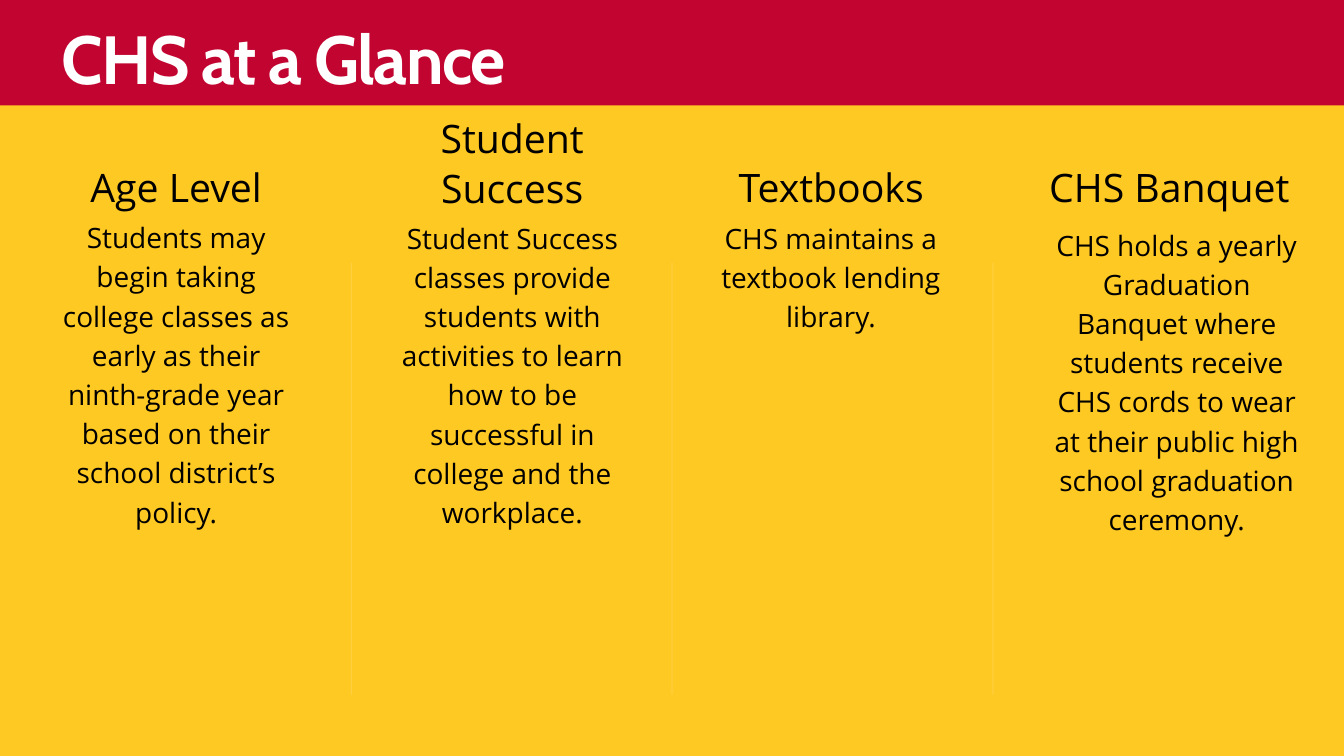
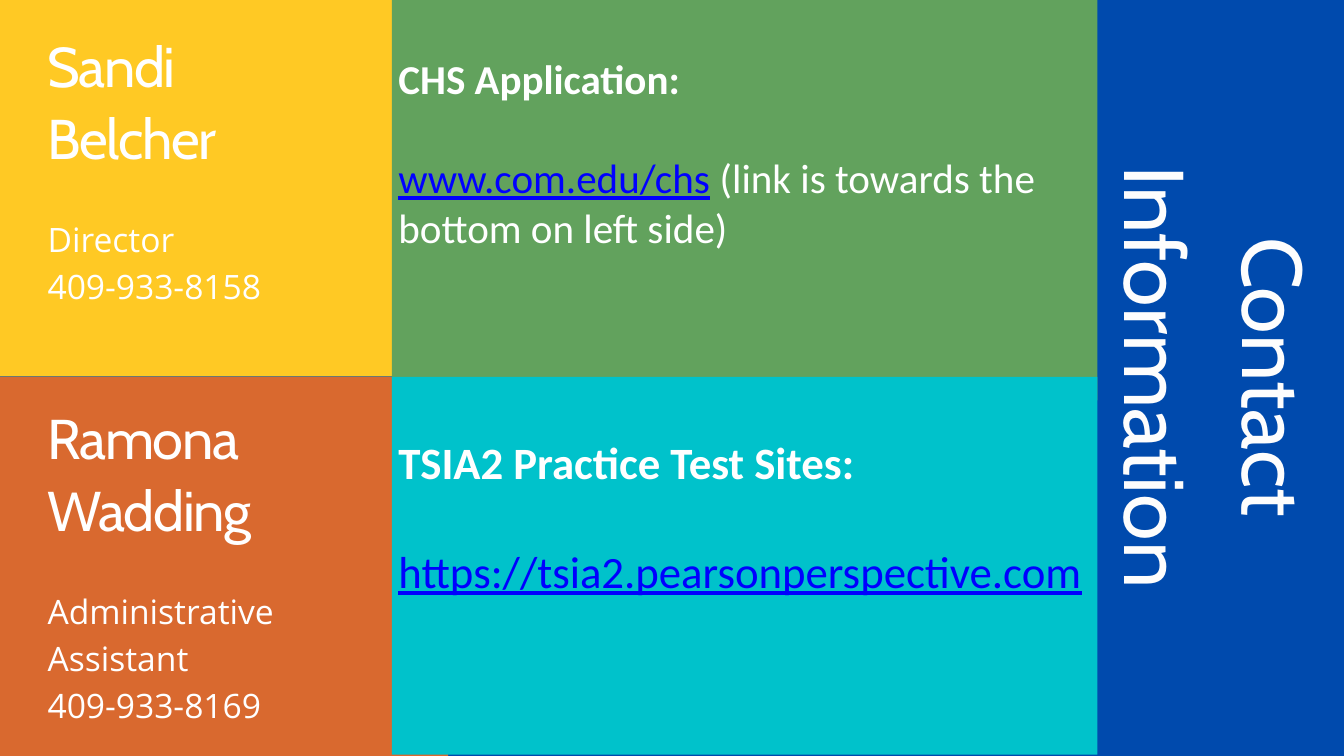
import pptx
import pptx.dml.color
import pptx.enum.shapes
import pptx.enum.text
import pptx.util
from lxml import etree
from pptx.oxml.ns import qn
from pptx.util import Cm, Pt

YELLOW, RED, BLUE = "FFC924", "C20530", "004AAD"
GREEN, TURQUOISE, ORANGE = "62A25D", "00C2CB", "D9692F"
WHITE, BLACK, LINK_BLUE, OFF_WHITE = "FFFFFF", "000000", "0000FF", "FDFDFD"
DISPLAY_FONT, BODY_FONT, PANEL_FONT = "Cabin", "Open Sans", "Calibri"
CENTER = pptx.enum.text.PP_ALIGN.CENTER
LEFT = pptx.enum.text.PP_ALIGN.LEFT
SLIDE_WIDTH, SLIDE_HEIGHT = 50.8, 28.58

# heading lines, heading left and width, body left, top, width and height, body
COLUMNS = [
    (["Age Level"], (1.35, 10.62), (1.96, 8.13, 9.4, 11.86),
     "Students may begin taking college classes as early as their ninth-grade "
     "year based on their school district’s policy."),
    (["Student", "Success"], (14.05, 10.62), (14.66, 8.15, 9.42, 11.86),
     "Student Success classes provide students with activities to learn how to "
     "be successful in college and the workplace."),
    (["Textbooks"], (25.91, 11.02), (26.52, 8.15, 9.78, 4.39),
     "CHS maintains a textbook lending library."),
    (["CHS Banquet"], (38.58, 11.25), (39.5, 8.41, 9.96, 11.86),
     "CHS holds a yearly Graduation Banquet where students receive CHS cords to "
     "wear at their public high school graduation ceremony."),
]

CONTACTS = [
    (["Sandi Belcher"], ["Director", "409-933-8158"], 3.45),
    (["Ramona", "Wadding"], ["Administrative Assistant", "409-933-8169"], 5.23),
]


def color(hex_code):
    return pptx.dml.color.RGBColor.from_string(hex_code)


def add_slide(deck, background):
    slide = deck.slides.add_slide(deck.slide_layouts[6])
    slide.background.fill.solid()
    slide.background.fill.fore_color.rgb = color(background)
    return slide


def add_block(slide, left, top, width, height, fill, opacity=100):
    block = slide.shapes.add_shape(
        pptx.enum.shapes.MSO_SHAPE.RECTANGLE,
        Cm(left), Cm(top), Cm(width), Cm(height))
    block.shadow.inherit = False
    block.line.fill.background()
    block.fill.solid()
    block.fill.fore_color.rgb = color(fill)
    if opacity < 100:
        tint = block.fill._xPr.find(".//" + qn("a:srgbClr"))
        etree.SubElement(tint, qn("a:alpha"), val=str(opacity * 1000))
    return block


def style_run(run, font_name, size, hex_code, bold=False, tracking=0):
    """Format a run; tracking is letter spacing in points."""
    run.font.name = font_name
    run.font.size = Pt(size)
    run.font.bold = bold
    run.font.color.rgb = color(hex_code)
    if tracking:
        run.font._element.set("spc", str(round(tracking * 100)))


def add_text(slide, left, top, width, height, lines, font_name, size, leading,
             hex_code, align=LEFT, **run_style):
    """Add a text box without margins, one paragraph per line."""
    box = slide.shapes.add_textbox(Cm(left), Cm(top), Cm(width), Cm(height))
    frame = box.text_frame
    frame.word_wrap = True
    frame.auto_size = pptx.enum.text.MSO_AUTO_SIZE.SHAPE_TO_FIT_TEXT
    frame.margin_left = frame.margin_right = 0
    frame.margin_top = frame.margin_bottom = 0
    frame.text = "\n".join(lines)
    for paragraph in frame.paragraphs:
        paragraph.alignment = align
        paragraph.line_spacing = Pt(leading)
        for run in paragraph.runs:
            style_run(run, font_name, size, hex_code, **run_style)
    return box


def add_link_panel(slide, top, height, fill, size, heading, address, remark=""):
    """Add a coloured panel with a bold heading and a web address below it."""
    panel = add_block(slide, 14.81, top, 26.67, height, fill)
    frame = panel.text_frame
    frame.word_wrap = True
    frame.vertical_anchor = pptx.enum.text.MSO_ANCHOR.TOP
    line_height = Pt(size * 1.22)
    frame.margin_top = Cm(0.13) + line_height
    title = frame.paragraphs[0]
    title.text = heading
    title.alignment = LEFT
    style_run(title.runs[0], PANEL_FONT, size, WHITE, bold=True)

    target = frame.add_paragraph()
    target.text = address
    target.alignment = LEFT
    target.space_before = line_height
    style_run(target.runs[0], PANEL_FONT, size, LINK_BLUE)
    target.runs[0].font.underline = True
    if remark:
        note = target.add_run()
        note.text = remark
        style_run(note, PANEL_FONT, size, WHITE)


def add_column(slide, heading, heading_span, body_place, body):
    """Add a heading that grows upward from a shared baseline, and its text."""
    left, width = heading_span
    top = 6.05 - 1.86 * (len(heading) - 1)
    add_text(slide, left, top, width, 1.88 * len(heading), heading,
             BODY_FONT, 42, 53.8, BLACK, CENTER)
    add_text(slide, *body_place, [body], BODY_FONT, 30, 42, BLACK, CENTER)


def add_contact(slide, top, name, details, details_height):
    add_text(slide, 1.8, top, 8.56, 5.44, name,
             DISPLAY_FONT, 60, 76.8, WHITE, tracking=-1.5)
    add_text(slide, 1.8, top + 7.01, 8.56, details_height, details,
             BODY_FONT, 36, 50.4, WHITE)


def build_glance(deck):
    slide = add_slide(deck, YELLOW)
    add_block(slide, 0, 0, SLIDE_WIDTH, 3.99, RED)
    add_text(slide, 2.34, 1.17, 47.83, 2.59, ["CHS at a Glance"],
             DISPLAY_FONT, 73, 72.3, WHITE, bold=True, tracking=-1.8)
    for gap in range(len(COLUMNS) - 1):
        add_block(slide, 13.26 + 12.13 * gap, 9.93, 0.03, 16.33, WHITE, opacity=20)
    for column in COLUMNS:
        add_column(slide, *column)


def build_contacts(deck):
    slide = add_slide(deck, BLUE)
    add_block(slide, 0, 14.25, 16.94, 14.33, ORANGE)
    add_block(slide, 0, -0.05, 16.51, 14.28, YELLOW)
    add_link_panel(slide, 0, 15.14, GREEN, 44, "CHS Application:",
                   "www.com.edu/chs", " (link is towards the bottom on left side)")
    add_link_panel(slide, 14.25, 14.28, TURQUOISE, 48, "TSIA2 Practice Test Sites:",
                   "https://tsia2.pearsonperspective.com")
    for row, contact in enumerate(CONTACTS):
        add_contact(slide, 1.02 + 14.07 * row, *contact)
    side_title = add_text(slide, 32.92, 9.88, 27.03, 8.76, ["Contact Information"],
                          DISPLAY_FONT, 90.7, 127, OFF_WHITE, CENTER)
    side_title.rotation = 90


def main():
    deck = pptx.Presentation()
    deck.slide_width, deck.slide_height = Cm(SLIDE_WIDTH), Cm(SLIDE_HEIGHT)
    build_glance(deck)
    build_contacts(deck)
    deck.save("out.pptx")


if __name__ == "__main__":
    main()
